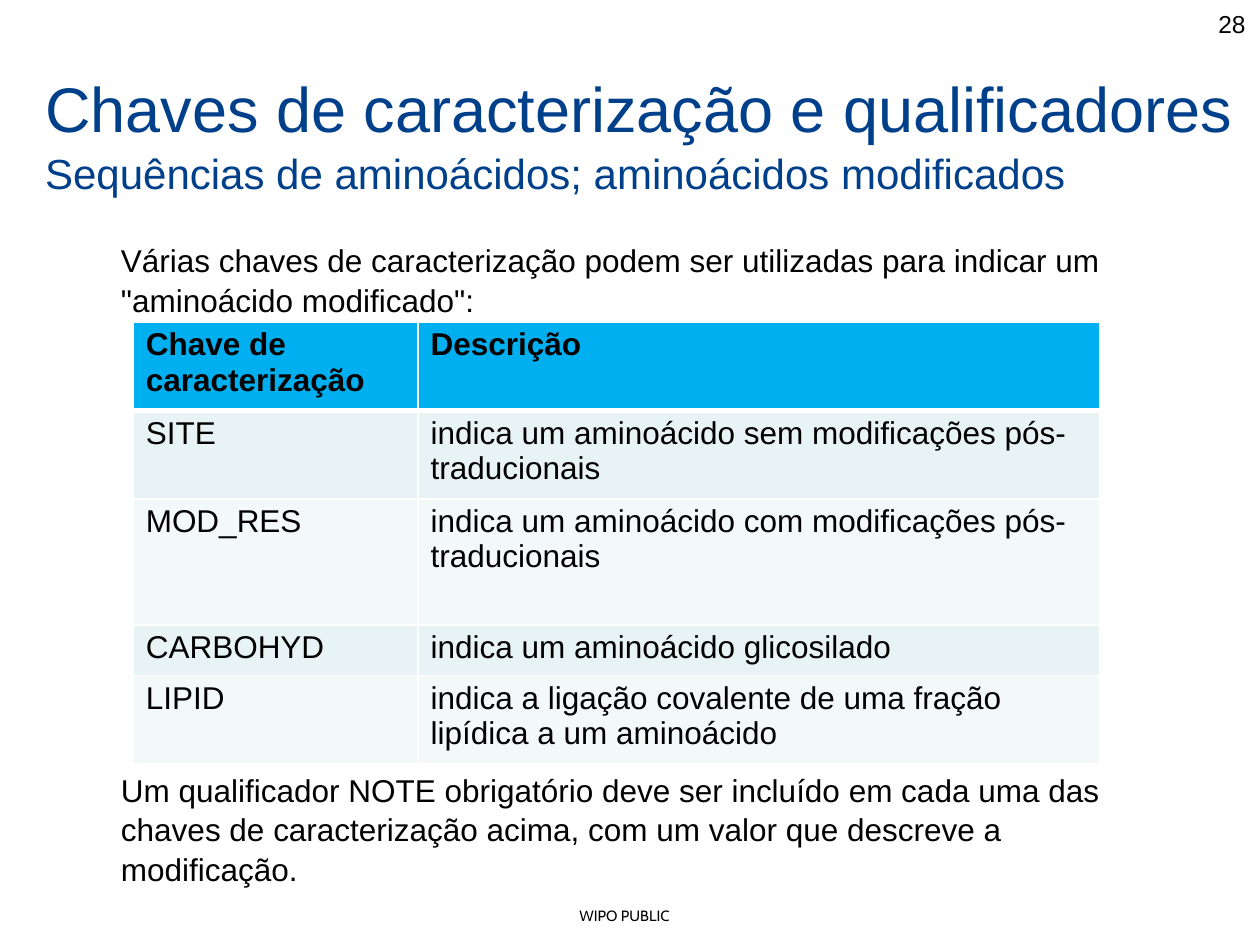
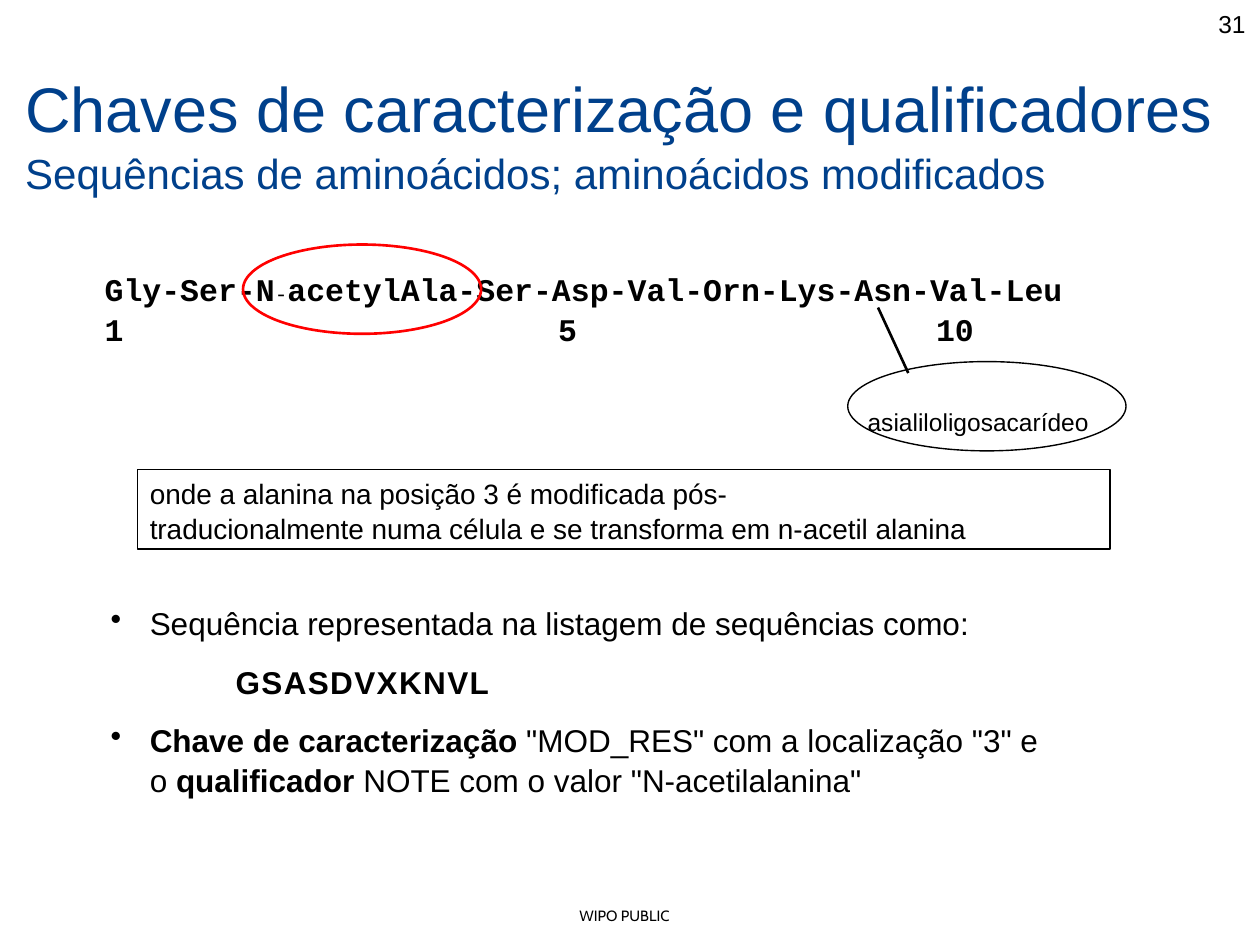
from lxml import etree
from pptx import Presentation
from pptx.dml.color import RGBColor
from pptx.enum.shapes import MSO_CONNECTOR, MSO_SHAPE
from pptx.enum.text import MSO_ANCHOR, PP_ALIGN
from pptx.oxml.ns import qn
from pptx.util import Cm, Pt

STRAIGHT = MSO_CONNECTOR.STRAIGHT
OVAL, RECTANGLE = MSO_SHAPE.OVAL, MSO_SHAPE.RECTANGLE
TOP, RIGHT = MSO_ANCHOR.TOP, PP_ALIGN.RIGHT

BLACK = RGBColor(0x00, 0x00, 0x00)
WHITE = RGBColor(0xFF, 0xFF, 0xFF)
NAVY = RGBColor(0x00, 0x40, 0x8B)
RED = RGBColor(0xFF, 0x00, 0x00)
HEADER_BLUE = RGBColor(0x00, 0xAF, 0xEF)
BANDS = (RGBColor(0xE7, 0xF3, 0xF4), RGBColor(0xF3, 0xF8, 0xF9))

SANS, MONO, FOOTER_FONT = "Arial", "Courier New", "Cabin"
LINE_SPACING = 1.05

TITLE = "Chaves de caracterização e qualificadores"
SUBTITLE = "Sequências de aminoácidos; aminoácidos modificados"
FOOTER = "WIPO PUBLIC"

FEATURE_KEYS = [
    ("Chave de caracterização", "Descrição"),
    ("SITE", "indica um aminoácido sem modificações pós-traducionais"),
    ("MOD_RES", "indica um aminoácido com modificações pós-traducionais"),
    ("CARBOHYD", "indica um aminoácido glicosilado"),
    ("LIPID", "indica a ligação covalente de uma fração lipídica a um aminoácido"),
]
COLUMN_WIDTHS = (5.74, 13.74)
ROW_HEIGHTS = (1.78, 1.78, 2.54, 1.02, 1.78)


def cm_box(box):
    return [Cm(v) for v in box]


def style(font, size, color=BLACK, name=SANS, bold=False):
    font.name, font.size, font.bold = name, Pt(size), bold
    font.color.rgb = color


def set_margins(target, left=0, top=0):
    target.margin_left, target.margin_top = Cm(left), Cm(top)
    target.margin_right = target.margin_bottom = 0


def add_text(s, box, lines, size, color=BLACK, name=SANS, bold=False, top=0.08):
    """Add a text box with one paragraph per line and return its paragraphs."""
    tf = s.shapes.add_textbox(*cm_box(box)).text_frame
    tf.word_wrap = True
    set_margins(tf, top=top)
    tf.text = "\n".join(lines)
    for p in tf.paragraphs:
        p.line_spacing = LINE_SPACING
        for r in p.runs:
            style(r.font, size, color, name, bold)
    return tf.paragraphs


def add_runs(p, parts, size, name=SANS):
    """Add (text, bold, size or None) runs to a paragraph."""
    for text, bold, own_size in parts:
        r = p.add_run()
        r.text = text
        style(r.font, own_size or size, name=name, bold=bold)


def indent(p, left, first=0, bullet=None):
    pPr = p._p.get_or_add_pPr()
    pPr.set("marL", str(Cm(left)))
    pPr.set("indent", str(Cm(first)))
    if bullet:
        etree.SubElement(pPr, qn("a:buChar")).set("char", bullet)


def set_tabs(p, stops):
    tab_list = etree.SubElement(p._p.get_or_add_pPr(), qn("a:tabLst"))
    for stop in stops:
        etree.SubElement(tab_list, qn("a:tab"), pos=str(Cm(stop)), algn="l")


def add_outline(s, kind, box, color, width):
    sp = s.shapes.add_shape(kind, *cm_box(box))
    sp.shadow.inherit = False
    sp.fill.background()
    sp.line.color.rgb = color
    sp.line.width = Pt(width)
    return sp


def add_frame(prs, number, title_left):
    """Add a slide with its number, title and footer."""
    s = prs.slides.add_slide(prs.slide_layouts[6])
    add_text(s, (24.56, 0.08, 0.7, 0.66), [number], 14)
    title = add_text(s, (title_left, 1.24, 24.13, 2.62), [TITLE, SUBTITLE], 36, NAVY)
    title[1].runs[0].font.size = Pt(24)
    add_text(s, (11.68, 18.26, 2.03, 0.41), [FOOTER], 8.5, name=FOOTER_FONT, top=0)
    return s


def set_border(cell, side, width):
    ln = etree.SubElement(cell._tc.get_or_add_tcPr(), qn("a:ln" + side), w=str(Pt(width)))
    fill = etree.SubElement(ln, qn("a:solidFill"))
    etree.SubElement(fill, qn("a:srgbClr"), val=str(WHITE))


def add_key_table(s, left, top):
    tbl = s.shapes.add_table(
        len(ROW_HEIGHTS), len(COLUMN_WIDTHS), Cm(left), Cm(top),
        Cm(sum(COLUMN_WIDTHS)), Cm(sum(ROW_HEIGHTS))).table
    for column, width in zip(tbl.columns, COLUMN_WIDTHS):
        column.width = Cm(width)
    for i, (row, texts) in enumerate(zip(tbl.rows, FEATURE_KEYS)):
        row.height = Cm(ROW_HEIGHTS[i])
        widths = {"L": 1, "R": 1, "T": 3 if i == 1 else 1, "B": 3 if i == 0 else 1}
        for cell, text in zip(row.cells, texts):
            for side, width in widths.items():
                set_border(cell, side, width)
            cell.fill.solid()
            cell.fill.fore_color.rgb = BANDS[(i - 1) % 2] if i else HEADER_BLUE
            set_margins(cell, left=0.25, top=0.1)
            cell.text = text
            style(cell.text_frame.paragraphs[0].runs[0].font, 18, bold=i == 0)


def add_sequence(s, left, top):
    """Draw the peptide with its numbering and its two marked residues."""
    residues, numbers, sugar = add_text(
        s, (left, top, 19.84, 3.38),
        ["", "1\t5\t10", "asialiloligosacarídeo"], 18, name=MONO, bold=True)
    add_runs(residues, [("Gly-Ser-N", True, None), ("-", False, 12),
                        ("acetylAla-Ser-Asp-Val-Orn-Lys-Asn-Val-Leu", True, None)],
             18, MONO)
    set_tabs(numbers, (9.14, 16.76))
    sugar.alignment = RIGHT
    sugar.space_before = Pt(33)
    style(sugar.runs[0].font, 14)

    add_outline(s, OVAL, (left + 14.98, top + 1.96, 5.61, 1.8), BLACK, 0.78)
    add_outline(s, OVAL, (left + 2.79, top - 0.4, 4.8, 1.8), RED, 1.5)
    bond = s.shapes.add_connector(
        STRAIGHT, *cm_box((left + 15.59, top + 0.87, left + 16.2, top + 2.19)))
    bond.line.color.rgb = BLACK
    bond.line.width = Pt(1.5)
    etree.SubElement(bond._element.spPr, qn("a:effectLst"))


def add_note(s, box, text):
    sp = add_outline(s, RECTANGLE, box, BLACK, 0.78)
    tf = sp.text_frame
    tf.word_wrap = True
    tf.vertical_anchor = TOP
    set_margins(tf, left=0.25, top=0.1)
    tf.text = text
    p = tf.paragraphs[0]
    p.alignment = PP_ALIGN.LEFT
    p.line_spacing = LINE_SPACING
    for r in p.runs:
        style(r.font, 16)


def add_annotation_bullets(s, box):
    listing, letters, key = add_text(
        s, box, ["Sequência representada na listagem de sequências como:",
                 "GSASDVXKNVL", ""], 18, top=0.41)
    letters.space_before = key.space_before = Pt(10.8)
    for p in (listing, key):
        indent(p, 0.84, -0.79, "•")
    indent(letters, 2.57)
    r = letters.runs[0]
    r.font.bold = True
    r._r.get_or_add_rPr().set("spc", "80")
    add_runs(key, [("Chave de caracterização ", True, None),
                   ("\"MOD_RES\" com a localização \"3\" e o ", False, None),
                   ("qualificador ", True, None),
                   ("NOTE com o valor \"N-acetilalanina\"", False, None)], 18)


def build_key_slide(prs):
    s = add_frame(prs, "28", 0.91)
    add_text(s, (2.44, 4.75, 20, 1.6),
             ["Várias chaves de caracterização podem ser utilizadas para indicar um "
              "\"aminoácido modificado\":"], 18)
    add_key_table(s, 2.69, 6.5)
    add_text(s, (2.44, 15.42, 20, 2.36),
             ["Um qualificador NOTE obrigatório deve ser incluído em cada uma das "
              "chaves de caracterização acima, com um valor que descreve a "
              "modificação."], 18)


def build_example_slide(prs):
    s = add_frame(prs, "31", 0.51)
    add_sequence(s, 2.11, 5.33)
    add_note(s, (2.77, 9.47, 19.61, 1.6),
             "onde a alanina na posição 3 é modificada pós-\v"
             "traducionalmente numa célula e se transforma em n-acetil alanina")
    add_annotation_bullets(s, (2.18, 11.73, 18.92, 4.27))


def main():
    prs = Presentation()
    prs.slide_width, prs.slide_height = Cm(25.4), Cm(19.05)
    build_key_slide(prs)
    build_example_slide(prs)
    prs.save("out.pptx")


if __name__ == "__main__":
    main()
